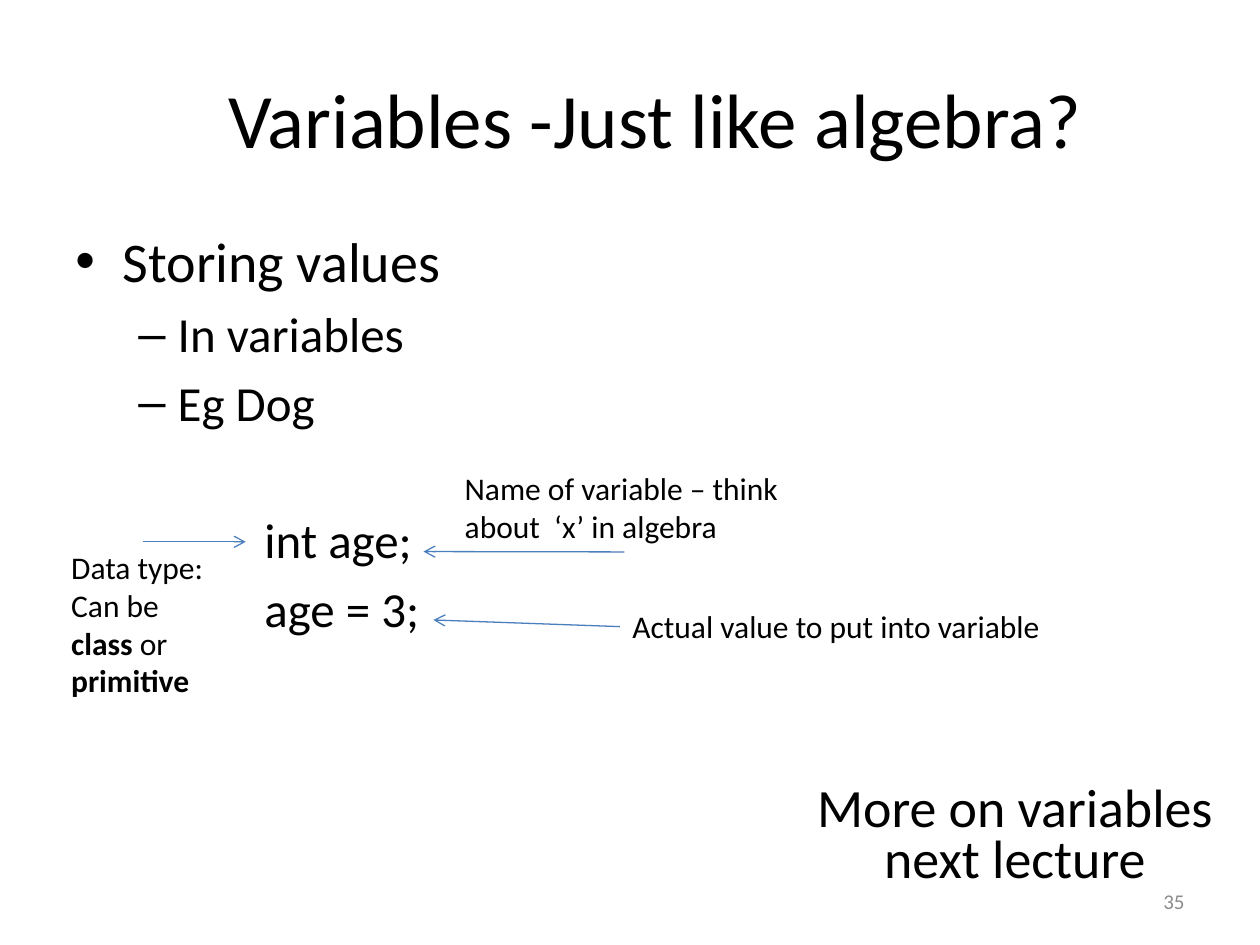
from lxml import etree
from pptx import Presentation
from pptx.dml.color import RGBColor
from pptx.enum.shapes import MSO_CONNECTOR
from pptx.enum.text import MSO_ANCHOR, PP_ALIGN
from pptx.oxml.ns import qn
from pptx.util import Pt

BLACK = RGBColor(0x00, 0x00, 0x00)
GRAY = RGBColor(0x8C, 0x8C, 0x8C)
BLUE = RGBColor(0x4B, 0x7E, 0xBC)
STRAIGHT = MSO_CONNECTOR.STRAIGHT
TOP, MIDDLE = MSO_ANCHOR.TOP, MSO_ANCHOR.MIDDLE
LEFT, CENTER, RIGHT = PP_ALIGN.LEFT, PP_ALIGN.CENTER, PP_ALIGN.RIGHT


def add_text(box, paragraphs, size, color=BLACK, align=LEFT, anchor=TOP):
    """Add a text box; each paragraph is a list of (text, bold) runs."""
    sp = s.shapes.add_textbox(*[Pt(v) for v in box])
    tf = sp.text_frame
    tf.word_wrap = True
    tf.vertical_anchor = anchor
    for i, runs in enumerate(paragraphs):
        p = tf.paragraphs[0] if i == 0 else tf.add_paragraph()
        p.alignment = align
        for text, bold in runs:
            r = p.add_run()
            r.text = text
            r.font.name = "Calibri"
            r.font.size = Pt(size)
            r.font.bold = bold
            r.font.color.rgb = color
    return sp


def add_arrow(source, site, x, y):
    """Draw an arrow from a connection site of a label to a point."""
    c = s.shapes.add_connector(STRAIGHT, 0, 0, Pt(x), Pt(y))
    c.begin_connect(source, site)
    c.line.color.rgb = BLUE
    c.line.width = Pt(0.75)
    etree.SubElement(c.line._get_or_add_ln(), qn("a:tailEnd"), type="arrow")
    etree.SubElement(c._element.spPr, qn("a:effectLst"))


prs = Presentation()
prs.slide_width, prs.slide_height = Pt(720), Pt(540)
s = prs.slides.add_slide(prs.slide_layouts[6])

# Title
add_text((50.4, 22.5, 648, 90), [[("Variables -Just like algebra?", False)]],
         44, align=CENTER, anchor=MIDDLE)

# Body: text, size, left margin, indent, space before, bullet
body = [
    ("Storing values", 32, 27, -27, 6.4, "•"),
    ("In variables", 28, 58.5, -22.5, 5.6, "–"),
    ("Eg Dog", 28, 58.5, -22.5, 5.6, "–"),
    ("int age;", 28, 126, -18, 45, None),
    ("age = 3;", 28, 126, -18, 5.6, None),
]
sp = add_text((36, 126, 648, 380), [[(row[0], False)] for row in body], 28)
for p, (text, size, margin, indent, before, bullet) in zip(sp.text_frame.paragraphs, body):
    p.runs[0].font.size = Pt(size)
    p.space_before = Pt(before)
    pPr = p._p.get_or_add_pPr()
    pPr.set("marL", str(Pt(margin)))
    pPr.set("indent", str(Pt(indent)))
    if bullet:
        etree.SubElement(pPr, qn("a:buFont"), typeface="Arial")
        etree.SubElement(pPr, qn("a:buChar"), char=bullet)
    else:
        etree.SubElement(pPr, qn("a:buNone"))

# Labels with arrows pointing at the code
data_type = add_text(
    (33.6, 309.6, 96, 94.5),
    [[("Data type:", False)],
     [("Can be ", False), ("class ", True), ("or ", False), ("primitive", True)]], 18)
add_arrow(data_type, 0, 140.4, 309.6)

name = add_text((258.5, 264.4, 196.6, 51),
                [[("Name of variable – think about  ‘x’ in algebra", False)]], 18)
add_arrow(name, 2, 242, 315.2)

value = add_text((354.3, 343.6, 264, 29),
                 [[("Actual value to put into variable", False)]], 18)
add_arrow(value, 1, 247.7, 354.3)

# Slide number and closing remark
add_text((516, 500.5, 168, 28.75), [[("35", False)]], 12, GRAY, RIGHT, MIDDLE)
sp = add_text((455.8, 433.5, 248.4, 90), [[("More on variables next lecture", False)]],
              30.8, align=CENTER, anchor=MIDDLE)
sp.text_frame.paragraphs[0].line_spacing = 0.8

prs.save("out.pptx")
